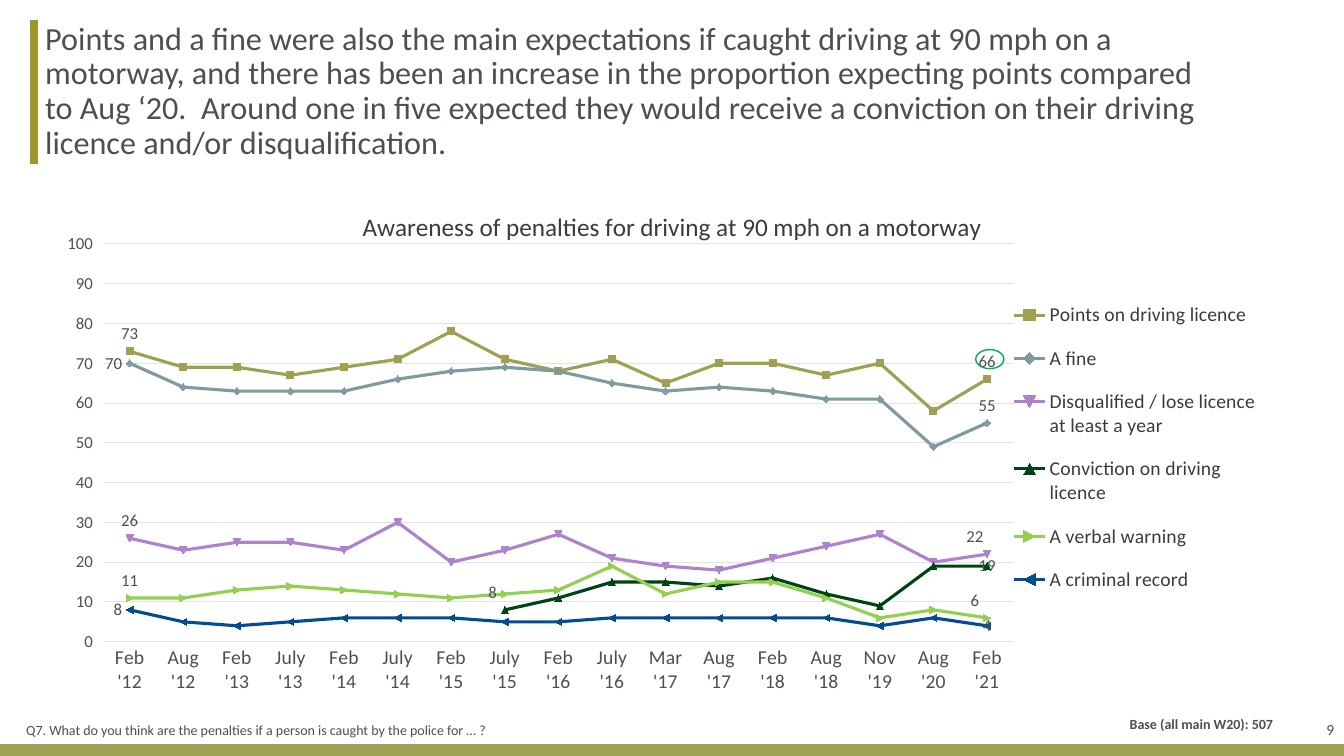
"""Build the slide on expected penalties for driving at 90 mph."""
from dataclasses import dataclass
from typing import Optional

from lxml import etree
from pptx import Presentation
from pptx.chart.data import CategoryChartData
from pptx.dml.color import RGBColor
from pptx.enum.chart import XL_CHART_TYPE, XL_LABEL_POSITION, XL_LEGEND_POSITION, XL_TICK_MARK
from pptx.enum.shapes import MSO_CONNECTOR, MSO_SHAPE
from pptx.enum.text import MSO_ANCHOR, PP_ALIGN
from pptx.oxml import parse_xml
from pptx.oxml.ns import nsdecls, qn
from pptx.util import Cm, Pt

LINE = XL_CHART_TYPE.LINE
ABOVE, LEFT, MID = XL_LABEL_POSITION.ABOVE, XL_LABEL_POSITION.LEFT, XL_LABEL_POSITION.CENTER
SIDE = XL_LEGEND_POSITION.RIGHT
NONE, OUT = XL_TICK_MARK.NONE, XL_TICK_MARK.OUTSIDE
START, END = PP_ALIGN.LEFT, PP_ALIGN.RIGHT
MIDDLE = MSO_ANCHOR.MIDDLE
RECT, OVAL = MSO_SHAPE.RECTANGLE, MSO_SHAPE.OVAL
STRAIGHT = MSO_CONNECTOR.STRAIGHT

GREY = RGBColor(0x4B, 0x4F, 0x56)
DARK = RGBColor(0x38, 0x3B, 0x40)
PALE = RGBColor(0xE3, 0xE4, 0xE7)
OLIVE = RGBColor(0x9F, 0xA0, 0x52)
GOLD = RGBColor(0x9F, 0x96, 0x2B)
RING = RGBColor(0x00, 0xB0, 0x50)
TEAL = RGBColor(0x7F, 0x9B, 0x9F)
LILAC = RGBColor(0xAF, 0x82, 0xCC)
PINE = RGBColor(0x00, 0x44, 0x16)
LIME = RGBColor(0x92, 0xD0, 0x50)
NAVY = RGBColor(0x02, 0x4C, 0x90)
FACE = "Calibri"


@dataclass
class Note:
    """A text box, with lengths in centimetres."""
    text: str
    box: tuple[float, float, float, float]
    size: float
    align: PP_ALIGN = START
    bold: bool = False
    inset: float = 0
    space: float = 1.0


@dataclass
class Tag:
    """A value label on one point, nudged by a share of the chart width."""
    point: int
    place: XL_LABEL_POSITION = ABOVE
    nudge: float = 0


@dataclass
class Trend:
    """One line of the chart."""
    name: str
    color: RGBColor
    values: list[Optional[int]]
    tags: list[Tag]


NOTES = [
    Note("Points and a fine were also the main expectations if caught driving at 90 mph on a "
         "motorway, and there has been an increase in the proportion expecting points compared "
         "to Aug ‘20.  Around one in five expected they would receive a conviction on their "
         "driving licence and/or disqualification.",
         (0.94, 0.51, 29.59, 3.61), 23, space=0.9),
    Note("Q7. What do you think are the penalties if a person is caught by the police for … ?",
         (0.46, 17.98, 21.51, 0.84), 10),
    Note("Base (all main W20): 507", (22.33, 17.83, 10, 0.81), 10, END, True, 0.25),
    Note("9", (31.55, 17.69, 2.32, 1.4), 11, END, inset=0.25),
]
WAVES = ["Feb '12", "Aug '12", "Feb '13", "July '13", "Feb '14", "July '14", "Feb '15",
         "July '15", "Feb '16", "July '16", "Mar '17", "Aug '17", "Feb '18", "Aug '18",
         "Nov '19", "Aug '20", "Feb '21"]
LAST = len(WAVES) - 1
TRENDS = [
    Trend("Points on driving licence", OLIVE,
          [73, 69, 69, 67, 69, 71, 78, 71, 68, 71, 65, 70, 70, 67, 70, 58, 66],
          [Tag(0), Tag(LAST)]),
    Trend("A fine", TEAL,
          [70, 64, 63, 63, 63, 66, 68, 69, 68, 65, 63, 64, 63, 61, 61, 49, 55],
          [Tag(0, LEFT), Tag(LAST)]),
    Trend("Disqualified / lose licence at least a year", LILAC,
          [26, 23, 25, 25, 23, 30, 20, 23, 27, 21, 19, 18, 21, 24, 27, 20, 22],
          [Tag(0), Tag(LAST, nudge=-0.01)]),
    Trend("Conviction on driving licence", PINE,
          [None] * 7 + [8, 11, 15, 15, 14, 16, 12, 9, 19, 19],
          [Tag(7, nudge=-0.01), Tag(LAST, MID)]),
    Trend("A verbal warning", LIME,
          [11, 11, 13, 14, 13, 12, 11, 12, 13, 19, 12, 15, 15, 11, 6, 8, 6],
          [Tag(0), Tag(LAST, nudge=-0.01)]),
    Trend("A criminal record", NAVY,
          [8, 5, 4, 5, 6, 6, 6, 5, 5, 6, 6, 6, 6, 6, 4, 6, 4],
          [Tag(0, LEFT), Tag(LAST, MID)]),
]


def style(item, **values) -> None:
    """Set each given attribute on the item."""
    for key, value in values.items():
        setattr(item, key, value)


def ink(font, size: float, color: RGBColor = GREY, bold: bool = False) -> None:
    """Set face, size, weight and colour of a font."""
    style(font, name=FACE, size=Pt(size), bold=bold)
    font.color.rgb = color


def stroke(line, color: RGBColor, width: float) -> None:
    """Set colour and width of a line."""
    line.color.rgb = color
    line.width = Pt(width)


def layout(**parts) -> etree.Element:
    """Make a manual chart layout."""
    body = "".join(f'<c:{key} val="{value}"/>' for key, value in parts.items())
    return parse_xml(f'<c:layout {nsdecls("c")}><c:manualLayout>{body}'
                     '</c:manualLayout></c:layout>')


def settle(node, after: str, **parts) -> None:
    """Put a manual layout behind the named child, or first if it is empty."""
    for old in node.findall(qn("c:layout")):
        node.remove(old)
    spot = node.index(node.find(qn(after))) + 1 if after else 0
    node.insert(spot, layout(**parts))


def write(slide, note: Note) -> None:
    """Draw one text box."""
    frame = slide.shapes.add_textbox(*map(Cm, note.box)).text_frame
    style(frame, word_wrap=True, vertical_anchor=MIDDLE, margin_left=Cm(0.2),
          margin_top=0, margin_right=Cm(note.inset), margin_bottom=0)
    para = frame.paragraphs[0]
    style(para, text=note.text, alignment=note.align, line_spacing=note.space)
    ink(para.runs[0].font, note.size, bold=note.bold)


def label(series, trend: Trend) -> None:
    """Style one line and label its chosen points."""
    series.smooth = False
    stroke(series.format.line, trend.color, 2.25)
    series.marker.style = None
    series.data_labels.show_value = False
    for tag in trend.tags:
        mark = series.points[tag.point].data_label
        ink(mark.font, 12)
        mark.position = tag.place
        if tag.nudge:
            node = next(n for n in series.data_labels._element.findall(qn("c:dLbl"))
                        if n.find(qn("c:idx")).get("val") == str(tag.point))
            settle(node, "c:idx", x=tag.nudge, y=0)


def plot(slide) -> None:
    """Draw the line chart."""
    data = CategoryChartData(number_format="0")
    data.categories = WAVES
    for trend in TRENDS:
        data.add_series(trend.name, trend.values)
    box = map(Cm, (1.37, 4.5, 30.61, 13.28))
    chart = slide.shapes.add_chart(LINE, *box, data).chart
    ink(chart.font, 10)
    title = chart.chart_title
    title.text_frame.text = "Awareness of penalties for driving at 90 mph on a motorway"
    ink(title.text_frame.paragraphs[0].runs[0].font, 18, DARK)
    settle(title._element, "c:tx", xMode="edge", yMode="edge", x=0.25, y=0.05)
    style(chart, has_legend=True)
    style(chart.legend, position=SIDE, include_in_layout=False)
    ink(chart.legend.font, 14, DARK)
    settle(chart.legend._element, "c:legendPos", xMode="edge", yMode="edge",
           x=0.8, y=0.2, w=0.2, h=0.62)
    area = chart.plots[0]
    area.vary_by_categories = False
    settle(chart._chartSpace.chart.plotArea, "", layoutTarget="inner", xMode="edge",
           yMode="edge", x=0.04, y=0.124, w=0.75, h=0.755)
    base, scale = chart.category_axis, chart.value_axis
    style(base, major_tick_mark=NONE, minor_tick_mark=NONE)
    stroke(base.format.line, PALE, 0.75)
    ink(base.tick_labels.font, 14)
    style(scale, minimum_scale=0, maximum_scale=100, major_unit=10,
          major_tick_mark=OUT, minor_tick_mark=NONE, has_major_gridlines=True)
    stroke(scale.major_gridlines.format.line, PALE, 0.75)
    scale.format.line.fill.background()
    ink(scale.tick_labels.font, 12)
    for series, trend in zip(area.series, TRENDS):
        label(series, trend)


def main() -> None:
    """Build and save the slide."""
    deck = Presentation()
    style(deck, slide_width=Cm(33.87), slide_height=Cm(19.05))
    slide = deck.slides.add_slide(deck.slide_layouts[6])
    shapes = slide.shapes
    band = shapes.add_shape(RECT, *map(Cm, (0, 18.75, 33.87, 0.3)))
    band.shadow.inherit = False
    band.fill.solid()
    band.fill.fore_color.rgb = OLIVE
    band.line.fill.background()
    rule = shapes.add_connector(STRAIGHT, *map(Cm, (0.86, 0.51, 0.86, 4.14)))
    stroke(rule.line, GOLD, 6)
    etree.SubElement(rule._element.spPr, qn("a:effectLst"))
    for note in NOTES:
        write(slide, note)
    plot(slide)
    ring = shapes.add_shape(OVAL, *map(Cm, (24.59, 8.81, 0.71, 0.48)))
    ring.shadow.inherit = False
    ring.fill.background()
    stroke(ring.line, RING, 1)
    deck.save("out.pptx")


if __name__ == "__main__":
    main()
